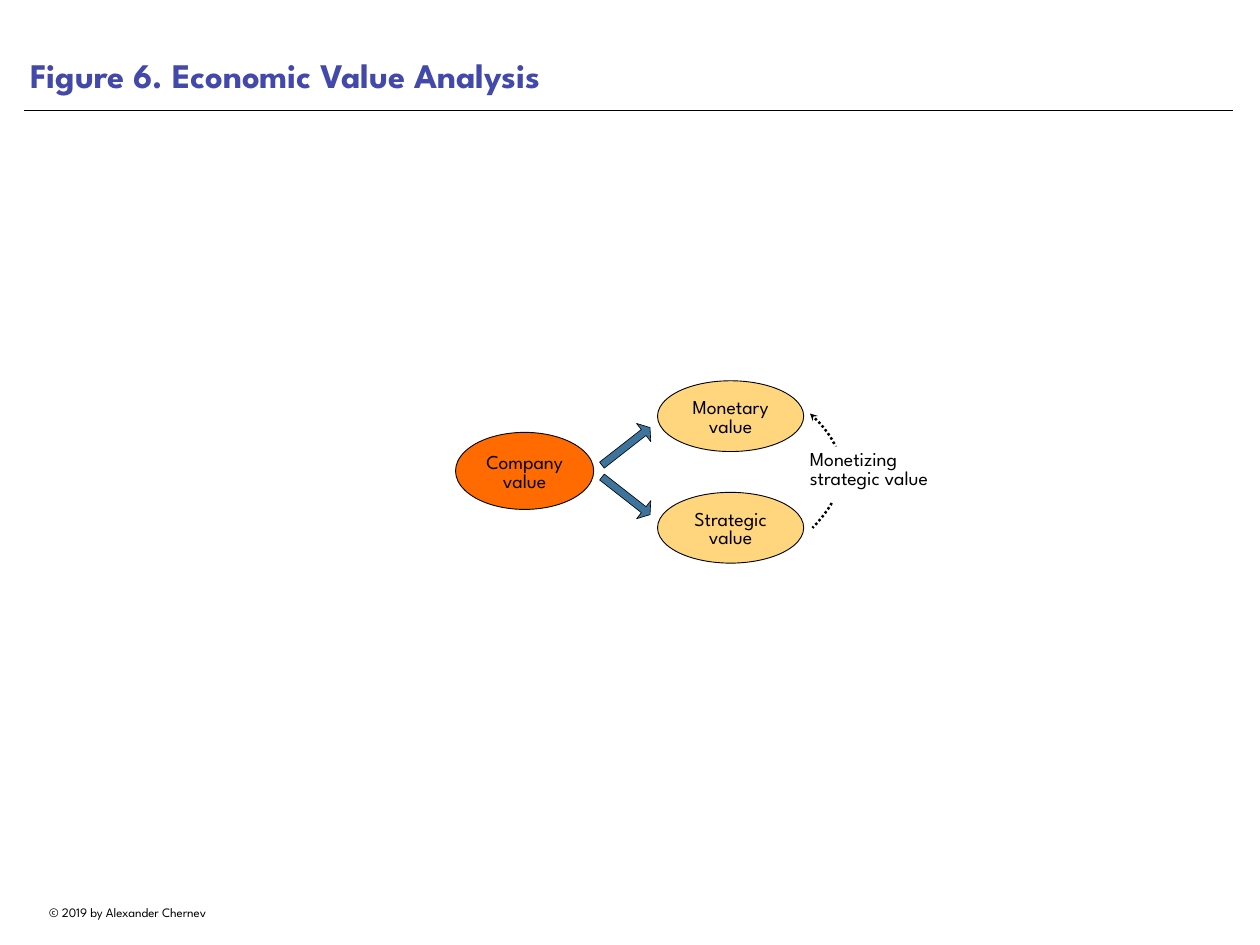
"""Build the economic value analysis slide."""
from lxml import etree
from pptx import Presentation
from pptx import util as u
from pptx.dml.color import RGBColor
from pptx.enum import dml, shapes, text
from pptx.oxml import ns

FONT = "League Spartan"
COLORS = {"title": "4349AA", "ink": "000000", "paper": "FFFFFF",
          "company": "FF6B00", "part": "FFD67E", "arrow": "3D749D"}
TITLE = "Figure 6. Economic Value Analysis"
COPYRIGHT = "© 2019 by Alexander Chernev"
LINK_LABEL = "Monetizing strategic value"
VALUES = [
    ("Company\nvalue", "company", (13.06, 12.4, 3.96, 2.21)),
    ("Monetary\nvalue", "part", (18.85, 10.92, 4.19, 2.03)),
    ("Strategic\nvalue", "part", (18.85, 14.12, 4.19, 2.03)),
]
ARROWS = [(12.47, -38), (13.89, 38)]
LINK_CURVE = [(23.22, 11.86), (24.38, 12.9), (24.41, 14), (23.29, 15.14)]
CURVE_STEPS = 24


def cm(*lengths):
    return [u.Cm(v) for v in lengths]


def rgb(name):
    return RGBColor.from_string(COLORS[name])


def write(sp, words, size, align, anchor, spacing=1.0, inset=0, color="ink"):
    tf = sp.text_frame
    tf.text = words
    tf.word_wrap = True
    tf.vertical_anchor = anchor
    tf.margin_left = tf.margin_right = tf.margin_top = tf.margin_bottom = u.Cm(inset)
    for p in tf.paragraphs:
        p.alignment, p.line_spacing = align, spacing
        p.font.name, p.font.size = FONT, u.Pt(size)
        p.font.color.rgb = rgb(color)
    return tf


def add_shape(s, kind, box, fill, line_width=None):
    sp = s.shapes.add_shape(kind, *cm(*box))
    sp.shadow.inherit = False
    sp.fill.solid()
    sp.fill.fore_color.rgb = rgb(fill)
    if line_width:
        sp.line.color.rgb = rgb("ink")
        sp.line.width = u.Pt(line_width)
    else:
        sp.line.fill.background()
    return sp


def bezier(points, t):
    weights = ((1 - t) ** 3, 3 * t * (1 - t) ** 2, 3 * t ** 2 * (1 - t), t ** 3)
    return tuple(u.Cm(sum(w * q[axis] for w, q in zip(weights, points)))
                 for axis in (0, 1))


def add_heading(s):
    sp = s.shapes.title
    sp.left, sp.top, sp.width, sp.height = cm(0.69, 0, 34.65, 2.92)
    tf = write(sp, TITLE, 28, text.PP_ALIGN.LEFT, text.MSO_ANCHOR.BOTTOM,
               inset=0.18, color="title")
    tf.paragraphs[0].font.bold = True
    rule = s.shapes.add_connector(shapes.MSO_CONNECTOR.STRAIGHT,
                                  *cm(0.69, 3.15, 35.36, 3.15))
    rule.line.color.rgb = rgb("ink")
    rule.line.width = u.Pt(0.5)
    etree.SubElement(rule._element.spPr, ns.qn("a:effectLst"))


def add_link(s):
    start, *rest = [bezier(LINK_CURVE, i / CURVE_STEPS)
                    for i in range(CURVE_STEPS + 1)]
    builder = s.shapes.build_freeform(*start)
    builder.add_line_segments(rest, close=False)
    curve = builder.convert_to_shape()
    curve.shadow.inherit = False
    curve.fill.background()
    curve.line.color.rgb = rgb("ink")
    curve.line.width = u.Pt(2)
    curve.line.dash_style = dml.MSO_LINE.ROUND_DOT
    etree.SubElement(curve.line._get_or_add_ln(), ns.qn("a:headEnd"), type="stealth")
    rect = shapes.MSO_SHAPE.RECTANGLE
    add_shape(s, rect, (23.29, 12.8, 1.37, 1.6), "paper")
    label = add_shape(s, rect, (23.22, 12.95, 4.09, 1.09), "paper")
    write(label, LINK_LABEL, 16, text.PP_ALIGN.LEFT, text.MSO_ANCHOR.MIDDLE, 0.8)


def main():
    prs = Presentation()
    prs.slide_width, prs.slide_height = cm(36.12, 27.1)
    s = prs.slides.add_slide(prs.slide_layouts[5])
    add_heading(s)
    for words, fill, box in VALUES:
        sp = add_shape(s, shapes.MSO_SHAPE.OVAL, box, fill, 0.75)
        tf = write(sp, words, 16, text.PP_ALIGN.CENTER, text.MSO_ANCHOR.MIDDLE, 0.8)
        tf.margin_top = u.Cm(0.12)
    for top, angle in ARROWS:
        sp = add_shape(s, shapes.MSO_SHAPE.RIGHT_ARROW,
                       (17.07, top, 1.75, 0.66), "arrow", 0.5)
        sp.rotation = angle
        sp.adjustments[0], sp.adjustments[1] = 0.33, 0.35
    add_link(s)
    footer = s.shapes.add_textbox(*cm(0.69, 25.81, 5.94, 0.71))
    tf = write(footer, COPYRIGHT, 10.5, text.PP_ALIGN.CENTER,
               text.MSO_ANCHOR.TOP, inset=0.13)
    tf.word_wrap = False
    prs.save("out.pptx")


if __name__ == "__main__":
    main()
